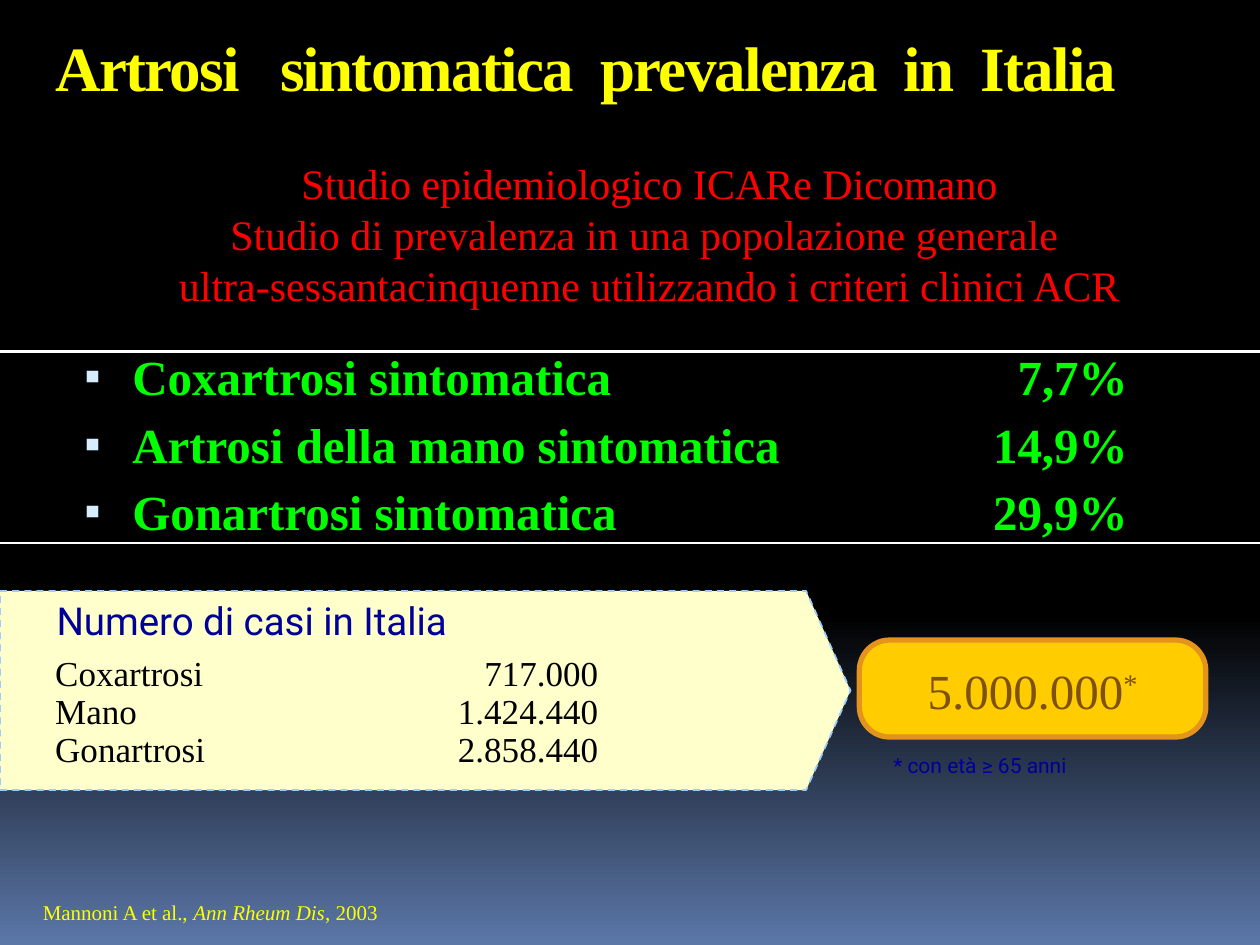
from pptx import Presentation
from pptx.dml.color import RGBColor
from pptx.enum.dml import MSO_LINE
from pptx.enum.shapes import MSO_CONNECTOR, MSO_SHAPE
from pptx.enum.text import MSO_ANCHOR, MSO_AUTO_SIZE, PP_ALIGN
from pptx.oxml.ns import qn
from pptx.util import Inches, Pt
from lxml import etree

DASH = MSO_LINE.DASH
STRAIGHT = MSO_CONNECTOR.STRAIGHT
PENTAGON, ROUNDED = MSO_SHAPE.PENTAGON, MSO_SHAPE.ROUNDED_RECTANGLE
TOP, MIDDLE, BOTTOM = MSO_ANCHOR.TOP, MSO_ANCHOR.MIDDLE, MSO_ANCHOR.BOTTOM
LEFT, CENTER = PP_ALIGN.LEFT, PP_ALIGN.CENTER
GROW, FIXED = MSO_AUTO_SIZE.SHAPE_TO_FIT_TEXT, MSO_AUTO_SIZE.NONE

WIDTH, HEIGHT = 10, 7.5
SERIF, SANS = "Times New Roman", "Roboto"
COLORS = {
    "black": "000000", "blue": "5B77A8", "yellow": "FFFF00", "red": "FF0000",
    "green": "00FF00", "navy": "000099", "white": "FFFFFF", "bullet": "D6ECFF",
    "cream": "FFFFCC", "sky": "99CCFF", "gold": "FFCC00", "orange": "E4931C",
    "brown": "7E510E",
}
PREVALENCE = [("Coxartrosi sintomatica", "7,7%"),
              ("Artrosi della mano sintomatica", "14,9%"),
              ("Gonartrosi sintomatica", "29,9%")]
CASES = [("Coxartrosi", "717.000"), ("Mano", "1.424.440"), ("Gonartrosi", "2.858.440")]
STUDY = ["Studio epidemiologico ICARe Dicomano",
         "Studio di prevalenza in una popolazione generale ",
         "ultra-sessantacinquenne utilizzando i criteri clinici ACR"]


def color(name):
    return RGBColor.from_string(COLORS[name])


def place(shape, left, top, width, height):
    shape.left, shape.top = Inches(left), Inches(top)
    shape.width, shape.height = Inches(width), Inches(height)


def add_run(para, text, size, tint, font=SERIF, bold=False, italic=False):
    span = para.add_run()
    span.text = text
    span.font.name, span.font.size = font, Pt(size)
    span.font.bold, span.font.italic = bold, italic
    span.font.color.rgb = color(tint)
    return span


def paragraphs(frame, count, align=LEFT, before=0, spacing=1.0):
    """Yield the given number of formatted paragraphs."""
    for index in range(count):
        para = frame.add_paragraph() if index else frame.paragraphs[0]
        para.alignment = align
        para.space_before = Pt(before)
        para.line_spacing = spacing
        yield para


def add_text_box(slide, bounds, anchor=TOP, wrap=True, inset=True, size=FIXED):
    box = slide.shapes.add_textbox(*map(Inches, bounds))
    frame = box.text_frame
    frame.word_wrap, frame.vertical_anchor, frame.auto_size = wrap, anchor, size
    if not inset:
        frame.margin_left = frame.margin_right = 0
        frame.margin_top = frame.margin_bottom = 0
    return frame


def add_panel(slide, kind, bounds, adjust, fill, line, weight):
    panel = slide.shapes.add_shape(kind, *map(Inches, bounds))
    panel.adjustments[0] = adjust
    panel.shadow.inherit = False
    panel.fill.solid()
    panel.fill.fore_color.rgb = color(fill)
    panel.line.color.rgb = color(line)
    panel.line.width = Pt(weight)
    return panel


def add_rule(slide, top):
    rule = slide.shapes.add_connector(STRAIGHT, 0, Inches(top), Inches(WIDTH), Inches(top))
    rule.line.color.rgb = color("white")
    rule.line.width = Pt(1.5)
    etree.SubElement(rule._element.spPr, qn("a:effectLst"))


def add_right_tab(para, position):
    tabs = etree.SubElement(para._p.get_or_add_pPr(), qn("a:tabLst"))
    etree.SubElement(tabs, qn("a:tab"), pos=str(Inches(position)), algn="r")


def add_bullet(para, indent, hanging):
    props = para._p.get_or_add_pPr()
    props.set("marL", str(Inches(indent)))
    props.set("indent", str(-Inches(hanging)))
    tint = etree.SubElement(props, qn("a:buClr"))
    etree.SubElement(tint, qn("a:srgbClr"), val=COLORS["bullet"])
    etree.SubElement(props, qn("a:buSzPct"), val="95000")
    etree.SubElement(props, qn("a:buFont"), typeface=SERIF)
    etree.SubElement(props, qn("a:buChar"), char="▪")


def paint_background(slide):
    fill = slide.background.fill
    fill.gradient()
    fill.gradient_angle = 270
    for stop, position, name in zip(fill.gradient_stops, (0.65, 1), ("black", "blue")):
        stop.position = position
        stop.color.rgb = color(name)


def fill_title(title):
    place(title, 0.34, 0.16, 9.46, 0.74)
    para = next(paragraphs(title.text_frame, 1))
    span = add_run(para, "Artrosi   sintomatica  prevalenza  in  Italia", 36, "yellow", bold=True)
    span.font._element.set("spc", "-100")
    title.text_frame.vertical_anchor = MIDDLE


def fill_prevalence(body):
    place(body, 0.5, 2.7, 9, 2.03)
    frame = body.text_frame
    frame.vertical_anchor, frame.auto_size = TOP, FIXED
    # Spacing keeps all three rows clear of the rules
    rows = paragraphs(frame, len(PREVALENCE), before=5)
    for para, (name, share) in zip(rows, PREVALENCE):
        add_bullet(para, 0.45, 0.38)
        add_right_tab(para, 8.96)
        add_run(para, f"{name}\t{share}", 28, "green", bold=True)


def add_study(slide):
    frame = add_text_box(slide, (0.51, 1.31, 9.29, 1.14), inset=False, size=GROW)
    for para, line in zip(paragraphs(frame, len(STUDY), CENTER, 4.8, 0.85), STUDY):
        add_run(para, line, 24, "red")


def add_cases(slide):
    arrow = add_panel(slide, PENTAGON, (0, 4.69, 6.75, 1.58), 0.223, "cream", "sky", 1)
    arrow.line.dash_style = DASH
    frame = add_text_box(slide, (0.34, 5.16, 4.74, 0.97))
    for para, (name, count) in zip(paragraphs(frame, len(CASES), spacing=0.9), CASES):
        add_right_tab(para, 4.31)
        add_run(para, f"{name}\t{count}", 20, "black")
    frame = add_text_box(slide, (0.35, 4.69, 3.78, 0.47))
    add_run(frame.paragraphs[0], "Numero di casi in Italia", 22, "navy", SANS)


def add_total(slide):
    add_panel(slide, ROUNDED, (6.82, 5.08, 2.75, 0.77), 0.313, "gold", "orange", 3)
    frame = add_text_box(slide, (7.35, 5.24, 1.69, 0.47), wrap=False, inset=False, size=GROW)
    para = next(paragraphs(frame, 1, CENTER))
    add_run(para, "5.000.000", 28, "brown")
    star = add_run(para, "*", 28, "brown")
    star.font._element.set("baseline", "30000")


def add_notes(slide):
    options = {"anchor": BOTTOM, "wrap": False, "inset": False, "size": GROW}
    citation = add_text_box(slide, (0.34, 7.14, 2.8, 0.2), **options).paragraphs[0]
    add_run(citation, "Mannoni A et al., ", 12, "yellow")
    add_run(citation, "Ann Rheum Dis", 12, "yellow", italic=True)
    add_run(citation, ", 2003", 12, "yellow")
    age = add_text_box(slide, (7.09, 5.97, 1.43, 0.2), **options).paragraphs[0]
    add_run(age, "* con età ≥ 65 anni", 12, "navy", SANS)


def main():
    deck = Presentation()
    deck.slide_width, deck.slide_height = Inches(WIDTH), Inches(HEIGHT)
    slide = deck.slides.add_slide(deck.slide_layouts[1])
    paint_background(slide)

    # Heading and study description
    fill_title(slide.shapes.title)
    add_study(slide)

    # Prevalence list between two rules
    fill_prevalence(slide.placeholders[1])
    for top in (2.79, 4.31):
        add_rule(slide, top)

    # Case numbers, total and notes
    add_cases(slide)
    add_total(slide)
    add_notes(slide)
    deck.save("out.pptx")


if __name__ == "__main__":
    main()
